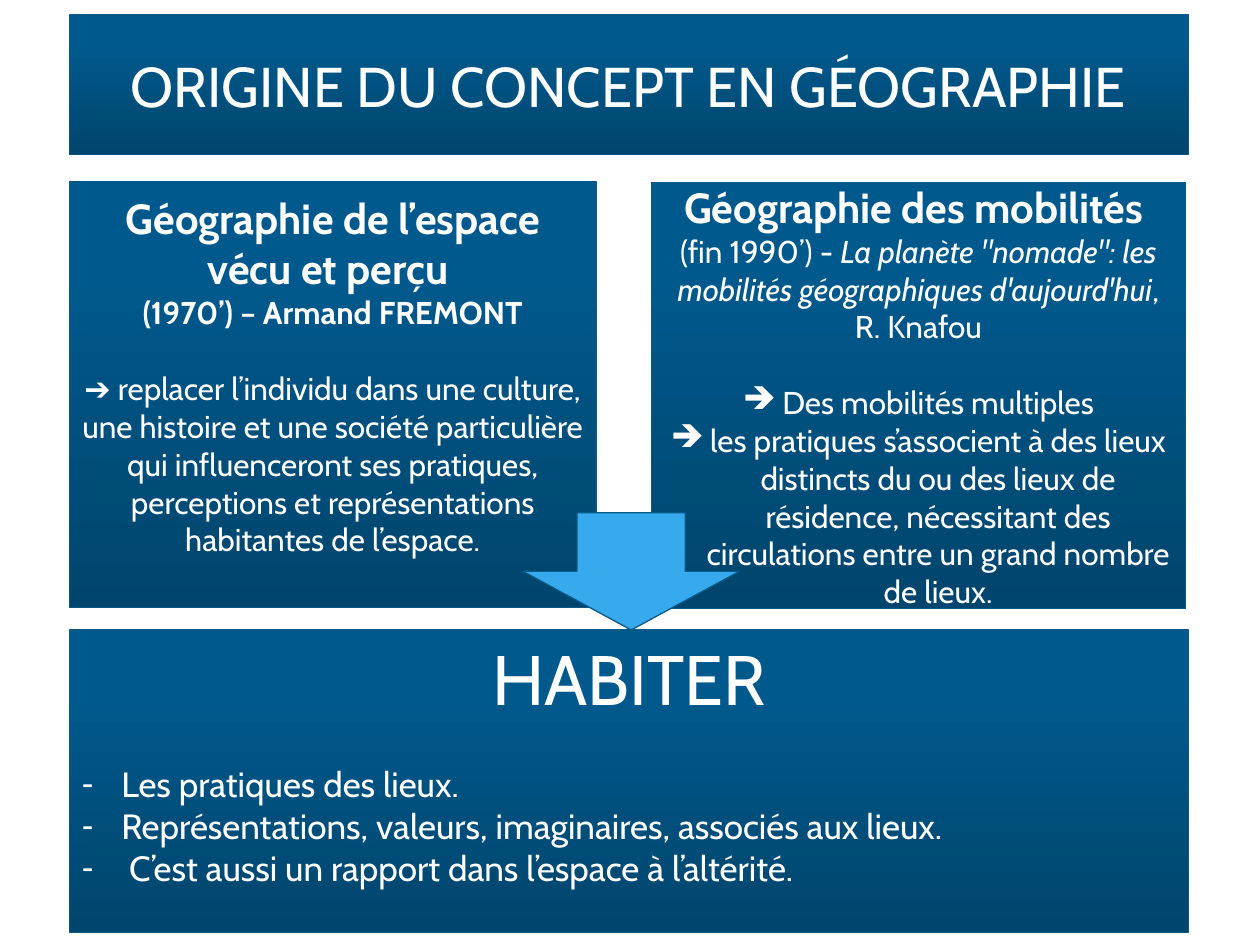
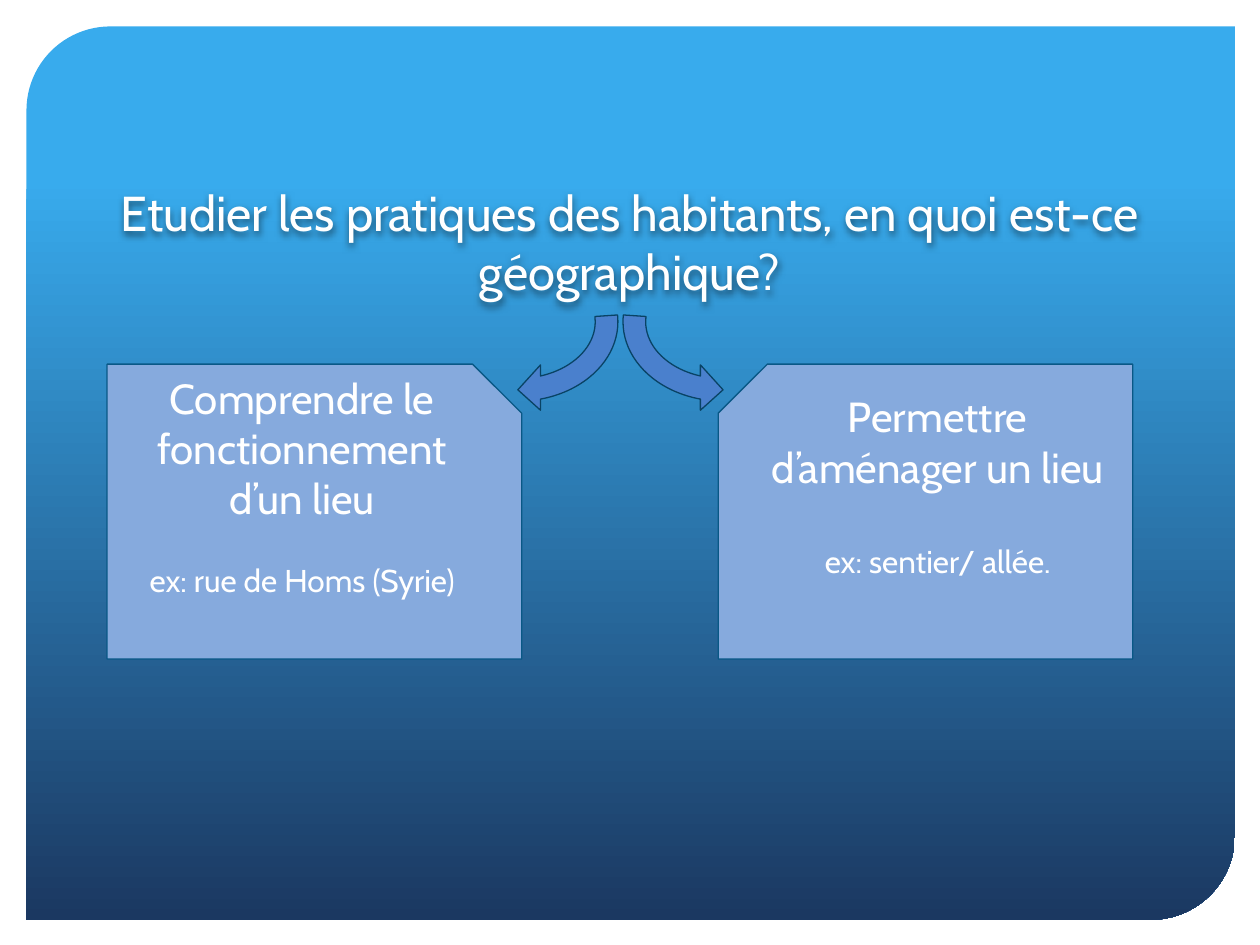
import dataclasses

import lxml.etree
import pptx
import pptx.dml.color
import pptx.enum.shapes
import pptx.enum.text
import pptx.oxml.ns
import pptx.util

Pt = pptx.util.Pt
qn = pptx.oxml.ns.qn
Shapes = pptx.enum.shapes.MSO_SHAPE
Align = pptx.enum.text.PP_ALIGN
Anchor = pptx.enum.text.MSO_ANCHOR


@dataclasses.dataclass(frozen=True)
class Theme:
    font: str = "Cabin"
    text: str = "FFFFFF"
    panel_stops: tuple = ((0, "00456D"), (80, "00598D"), (100, "005A8E"))
    backdrop_stops: tuple = ((17, "38ABED"), (100, "1B3861"))
    outline: str = "095886"
    down_arrow: str = "37AAED"
    card: str = "86AADD"
    curved_arrow: str = "4A80CD"
    curved_outline: str = "094365"
    outline_width: float = 0.75
    banner: int = 32
    concept: int = 40
    question: int = 28
    heading: int = 24
    list_item: int = 20
    body: int = 18
    inset: float = 3.6
    indent: float = 22.5
    line_height: float = 1.21


THEME = Theme()


@dataclasses.dataclass(frozen=True)
class Para:
    text: str
    size: int = THEME.body
    bold: bool = False
    gap: float = 0
    bullet: str = ""
    align: Align = Align.CENTER
    italic_part: str = ""


def blank(size, count=1):
    return round(size * THEME.line_height * count, 1)


def colour(value):
    return pptx.dml.color.RGBColor.from_string(value)


def place(shape, left, top, width, height):
    shape.left, shape.top = Pt(left), Pt(top)
    shape.width, shape.height = Pt(width), Pt(height)


def fill_gradient(shape, stops, angle):
    shape.fill.gradient()
    shape.fill.gradient_angle = angle
    stop_list = shape._element.spPr.find(qn("a:gradFill")).find(qn("a:gsLst"))
    for old_stop in list(stop_list):
        stop_list.remove(old_stop)
    for position, value in stops:
        stop = lxml.etree.SubElement(stop_list, qn("a:gs"), pos=str(position * 1000))
        lxml.etree.SubElement(stop, qn("a:srgbClr"), val=value)


def set_outline(shape, value=THEME.outline):
    shape.line.color.rgb = colour(value)
    shape.line.width = Pt(THEME.outline_width)


def add_plain_shape(page, kind, bounds, fill, outline=THEME.outline):
    shape = page.shapes.add_shape(kind, *(Pt(length) for length in bounds))
    shape.shadow.inherit = False
    shape.fill.solid()
    shape.fill.fore_color.rgb = colour(fill)
    set_outline(shape, outline)
    return shape


def flip(shape, *directions):
    frame = shape._element.spPr.find(qn("a:xfrm"))
    for direction in directions:
        frame.set(direction, "1")


def set_bullet(para, mark):
    properties = para._p.get_or_add_pPr()
    indent = Pt(THEME.indent) if mark else 0
    properties.set("marL", str(indent))
    properties.set("indent", str(-indent))
    if mark:
        lxml.etree.SubElement(properties, qn("a:buChar"), char=mark)
    else:
        lxml.etree.SubElement(properties, qn("a:buNone"))


def add_spans(para, item):
    before, italic, after = item.text.partition(item.italic_part) if item.italic_part else (item.text, "", "")
    for text in (before, italic, after):
        if text:
            span = para.add_run()
            span.text = text
            if text == italic:
                span.font.italic = True


def write(shape, items, anchor=Anchor.MIDDLE, space_below=0):
    frame = shape.text_frame
    frame.word_wrap = True
    frame.auto_size = pptx.enum.text.MSO_AUTO_SIZE.NONE
    frame.vertical_anchor = anchor
    frame.margin_top = Pt(THEME.inset)
    frame.margin_bottom = Pt(THEME.inset + space_below)
    for index, item in enumerate(items):
        para = frame.add_paragraph() if index else frame.paragraphs[0]
        set_bullet(para, item.bullet)
        para.alignment = item.align
        para.space_before = Pt(item.gap)
        add_spans(para, item)
        para.font.name = THEME.font
        para.font.size = Pt(item.size)
        para.font.bold = item.bold
        para.font.color.rgb = colour(THEME.text)


def style_panel(shape, bounds, items, space_below=0):
    place(shape, *bounds)
    shape.shadow.inherit = False
    fill_gradient(shape, THEME.panel_stops, 90)
    set_outline(shape)
    write(shape, items, space_below=space_below)


def add_panel(page, bounds, items, space_below=0):
    shape = page.shapes.add_shape(Shapes.RECTANGLE, 0, 0, 0, 0)
    style_panel(shape, bounds, items, space_below)


def add_backdrop(page):
    shape = page.shapes.add_shape(Shapes.ROUND_2_DIAG_RECTANGLE, 0, 0, 0, 0)
    place(shape, 15.1, 15.1, 690.5, 510.5)
    shape.adjustments[0] = 0.094
    shape.shadow.inherit = False
    fill_gradient(shape, THEME.backdrop_stops, 270)
    shape.line.fill.background()
    page.shapes._spTree.insert(2, shape._element)


def add_text_shadow(shape):
    shape.shadow.inherit = False
    effects = shape._element.spPr.find(qn("a:effectLst"))
    shadow = lxml.etree.SubElement(
        effects, qn("a:outerShdw"), blurRad=str(Pt(4)), dist=str(Pt(2)), dir="5400000")
    shade = lxml.etree.SubElement(shadow, qn("a:srgbClr"), val="000000")
    lxml.etree.SubElement(shade, qn("a:alpha"), val="50000")


def add_card(page, left, items, mirrored):
    card = add_plain_shape(page, Shapes.SNIP_1_RECTANGLE, (left, 208.1, 236.9, 168.5), THEME.card)
    if mirrored:
        flip(card, "flipH")
    write(card, items, space_below=blank(THEME.body, 2))


def add_curved_arrow(page, left, rotation, *directions):
    arrow = add_plain_shape(page, Shapes.CIRCULAR_ARROW, (left, 120.2, 103.7, 127.4),
                            THEME.curved_arrow, THEME.curved_outline)
    arrow.adjustments[3] = 159.65
    arrow.rotation = rotation
    flip(arrow, *directions)


def build_origin(deck):
    page = deck.slides.add_slide(deck.slide_layouts[1])
    left, width = 39.6, 639.4
    style_panel(page.shapes.title, (left, 8.6, width, 79.9),
                [Para("ORIGINE DU CONCEPT EN GÉOGRAPHIE", THEME.banner)])
    concept = [Para("HABITER", THEME.concept)]
    for index, text in enumerate((
            "Les pratiques des lieux.",
            "Représentations, valeurs, imaginaires, associés aux lieux.",
            " C’est aussi un rapport dans l’espace à l’altérité.")):
        gap = 0 if index else blank(THEME.list_item)
        concept.append(Para(text, THEME.list_item, gap=gap, bullet="-", align=Align.LEFT))
    style_panel(page.placeholders[1], (left, 360, width, 172.8), concept, blank(THEME.body))

    add_panel(page, (left, 103.7, 301, 243.4), [
        Para("Géographie de l’espace vécu et perçu ", THEME.heading, bold=True),
        Para("(1970’) – Armand FREMONT", bold=True),
        Para("➔ replacer l’individu dans une culture, une histoire et une société particulière "
             "qui influenceront ses pratiques, perceptions et représentations habitantes de l’espace.",
             gap=blank(THEME.body)),
    ], blank(THEME.body))
    book = "La planète \"nomade\": les mobilités géographiques d'aujourd'hui"
    add_panel(page, (372.2, 104.4, 305.3, 243.4), [
        Para("Géographie des mobilités ", THEME.heading, bold=True),
        Para(f"(fin 1990’) - {book}, R. Knafou", italic_part=book),
        Para("Des mobilités multiples", gap=blank(THEME.body), bullet="➔"),
        Para("les pratiques s’associent à des lieux distincts du ou des lieux de résidence, "
             "nécessitant des circulations entre un grand nombre de lieux.", bullet="➔"),
    ])
    add_plain_shape(page, Shapes.DOWN_ARROW, (298.8, 293, 123.8, 67), THEME.down_arrow)


def build_question(deck):
    page = deck.slides.add_slide(deck.slide_layouts[5])
    add_backdrop(page)
    question = page.shapes.title
    place(question, 56.2, 100.8, 607, 74.9)
    write(question, [Para("Etudier les pratiques des habitants, en quoi est-ce géographique?",
                          THEME.question)], Anchor.TOP)
    add_text_shadow(question)
    for left, aim, example, blank_size, mirrored in (
            (410.4, "Permettre d’aménager un lieu", "ex: sentier/ allée.", THEME.heading, True),
            (61.2, "Comprendre le fonctionnement d’un lieu", "ex: rue de Homs (Syrie)", THEME.body, False)):
        add_card(page, left, [Para(aim, THEME.heading), Para(example, gap=blank(blank_size))], mirrored)
    add_curved_arrow(page, 361.4, 90, "flipV")
    add_curved_arrow(page, 244.1, 270, "flipH", "flipV")


def main():
    deck = pptx.Presentation()
    deck.slide_width, deck.slide_height = Pt(720), Pt(540)
    build_origin(deck)
    build_question(deck)
    deck.save("out.pptx")


if __name__ == "__main__":
    main()
